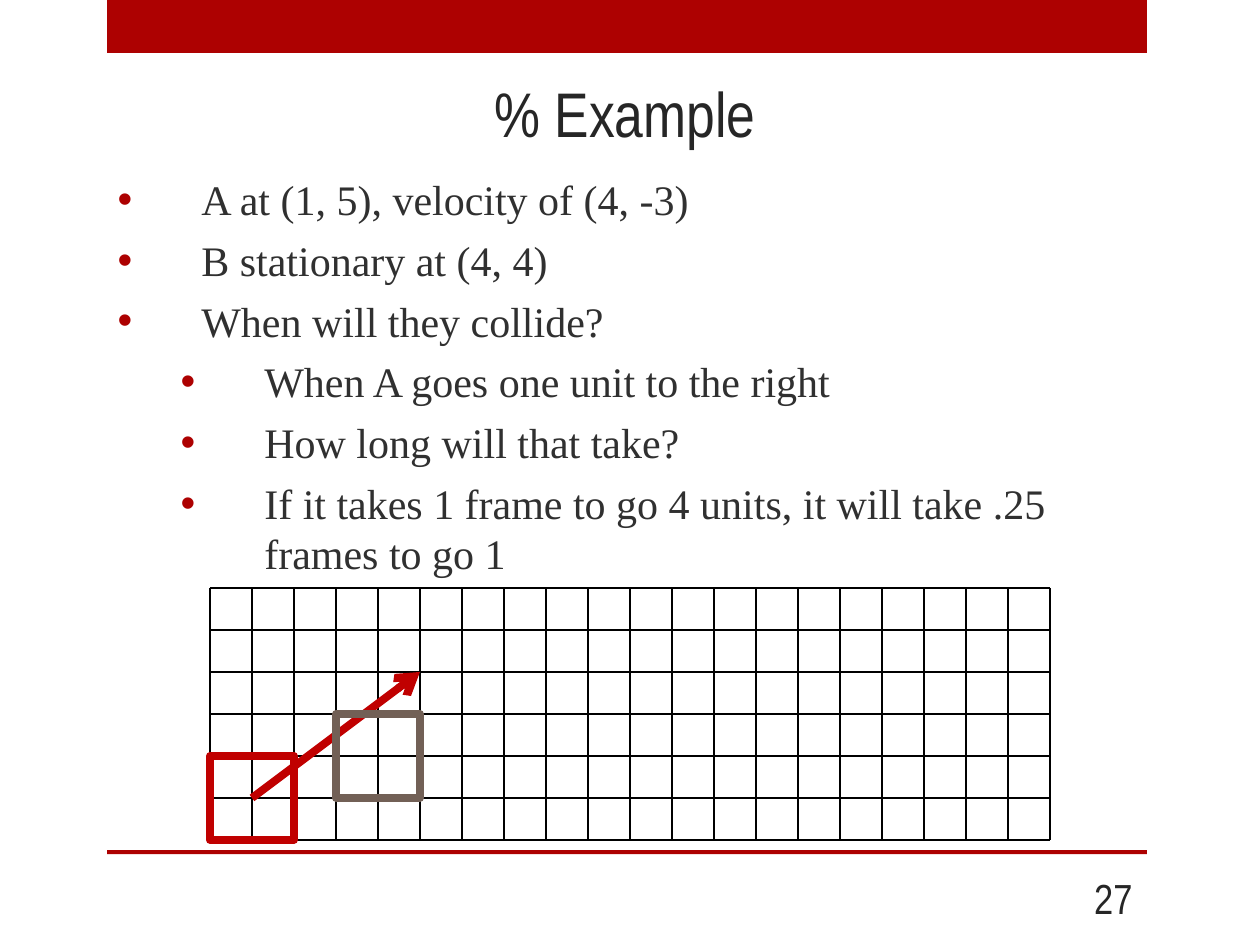
"""Build a slide on when two squares on a grid collide."""
from dataclasses import dataclass

from lxml.etree import SubElement
from pptx import Presentation
from pptx.dml.color import RGBColor as Color
from pptx.enum.shapes import MSO_CONNECTOR as Connector, MSO_SHAPE as Shape
from pptx.enum.text import MSO_ANCHOR as Anchor, PP_ALIGN as Align
from pptx.oxml.ns import qn
from pptx.util import Cm, Pt


@dataclass(frozen=True)
class Theme:
    accent: str = "AD0101"
    heading: str = "262626"
    body: str = "303030"
    grid: str = "000000"
    moving: str = "C00000"
    still: str = "726056"
    heading_font: str = "Arial Narrow"
    body_font: str = "Times New Roman"
    title_size: float = 36
    text_size: float = 24
    gap: float = 5.9
    thin: float = 0.75
    thick: float = 4.5


def write(para, text, *, font, size, color, align=Align.LEFT):
    para.alignment = align
    span = para.add_run()
    span.text = text
    span.font.name = font
    span.font.size = Pt(size)
    span.font.color.rgb = Color.from_string(color)


class SlideBuilder:
    def __init__(self, slide, theme):
        self.slide = slide
        self.theme = theme

    def rectangle(self, left, top, width, height, fill=None, outline=None):
        box = self.slide.shapes.add_shape(
            Shape.RECTANGLE, Cm(left), Cm(top), Cm(width), Cm(height))
        box.shadow.inherit = False
        if fill:
            box.fill.solid()
            box.fill.fore_color.rgb = Color.from_string(fill)
        else:
            box.fill.background()
        if outline:
            box.line.color.rgb = Color.from_string(outline)
            box.line.width = Pt(self.theme.thick)
            SubElement(box.line._get_or_add_ln(), qn("a:round"))
        else:
            box.line.fill.background()

    def line(self, start, end, color, width, arrow=False):
        connector = self.slide.shapes.add_connector(
            Connector.STRAIGHT, *map(Cm, (*start, *end)))
        connector.line.color.rgb = Color.from_string(color)
        connector.line.width = Pt(width)
        if arrow:
            SubElement(connector.line._get_or_add_ln(), qn("a:tailEnd"), type="arrow")
        SubElement(connector._element.spPr, qn("a:effectLst"))

    def text_frame(self, left, top, width, height, anchor=Anchor.MIDDLE):
        box = self.slide.shapes.add_textbox(Cm(left), Cm(top), Cm(width), Cm(height))
        frame = box.text_frame
        frame.word_wrap = True
        frame.vertical_anchor = anchor
        return frame

    def label(self, text, area, size, align):
        write(self.text_frame(*area).paragraphs[0], text, size=size, align=align,
              font=self.theme.heading_font, color=self.theme.heading)

    def bullets(self, items, area):
        theme = self.theme
        frame = self.text_frame(*area, anchor=Anchor.TOP)
        for index, (level, text) in enumerate(items):
            para = frame.add_paragraph() if index else frame.paragraphs[0]
            para.level = level
            para.space_before = Pt(theme.gap)
            write(para, text, font=theme.body_font, size=theme.text_size, color=theme.body)
            props = para._p.get_or_add_pPr()
            props.set("marL", str(Cm(1.69 + 1.27 * level)))
            props.set("indent", str(-Cm(1.69)))
            bullet_color = SubElement(props, qn("a:buClr"))
            SubElement(bullet_color, qn("a:srgbClr"), val=theme.accent)
            SubElement(props, qn("a:buFont"), typeface="Arial")
            SubElement(props, qn("a:buChar"), char="•")

    def grid(self, left, top, columns, rows, cell):
        right, bottom = left + columns * cell, top + rows * cell
        style = self.theme.grid, self.theme.thin
        for row in range(rows + 1):
            y = top + row * cell
            self.line((left, y), (right, y), *style)
        for column in range(columns + 1):
            x = left + column * cell
            self.line((x, top), (x, bottom), *style)


def main():
    theme = Theme()
    deck = Presentation()
    deck.slide_width, deck.slide_height = Cm(25.4), Cm(19.05)
    page = SlideBuilder(deck.slides.add_slide(deck.slide_layouts[6]), theme)

    page.rectangle(2.16, 0, 20.96, 1.07, fill=theme.accent)
    page.rectangle(2.16, 17.14, 20.96, 0.08, fill=theme.accent)
    page.label("% Example", (2.12, 1.35, 20.96, 1.83), theme.title_size, Align.CENTER)
    page.bullets([
        (0, "A at (1, 5), velocity of (4, -3)"),
        (0, "B stationary at (4, 4)"),
        (0, "When will they collide?"),
        (1, "When A goes one unit to the right"),
        (1, "How long will that take?"),
        (1, "If it takes 1 frame to go 4 units, it will take .25 frames to go 1"),
    ], (2.12, 3.38, 20.96, 13.54))
    page.label("27", (20.96, 17.58, 2.12, 1.02), theme.text_size, Align.RIGHT)

    cell = 2.54 / 3
    left, top = 5 * cell, 14 * cell
    page.grid(left, top, 20, 6, cell)

    def at(column, row):
        return left + column * cell, top + row * cell

    square = 2 * cell, 2 * cell
    page.rectangle(*at(0, 4), *square, outline=theme.moving)
    page.line(at(1, 5), at(5, 2), theme.moving, theme.thick, arrow=True)
    page.rectangle(*at(3, 3), *square, outline=theme.still)
    deck.save("out.pptx")


if __name__ == "__main__":
    main()
